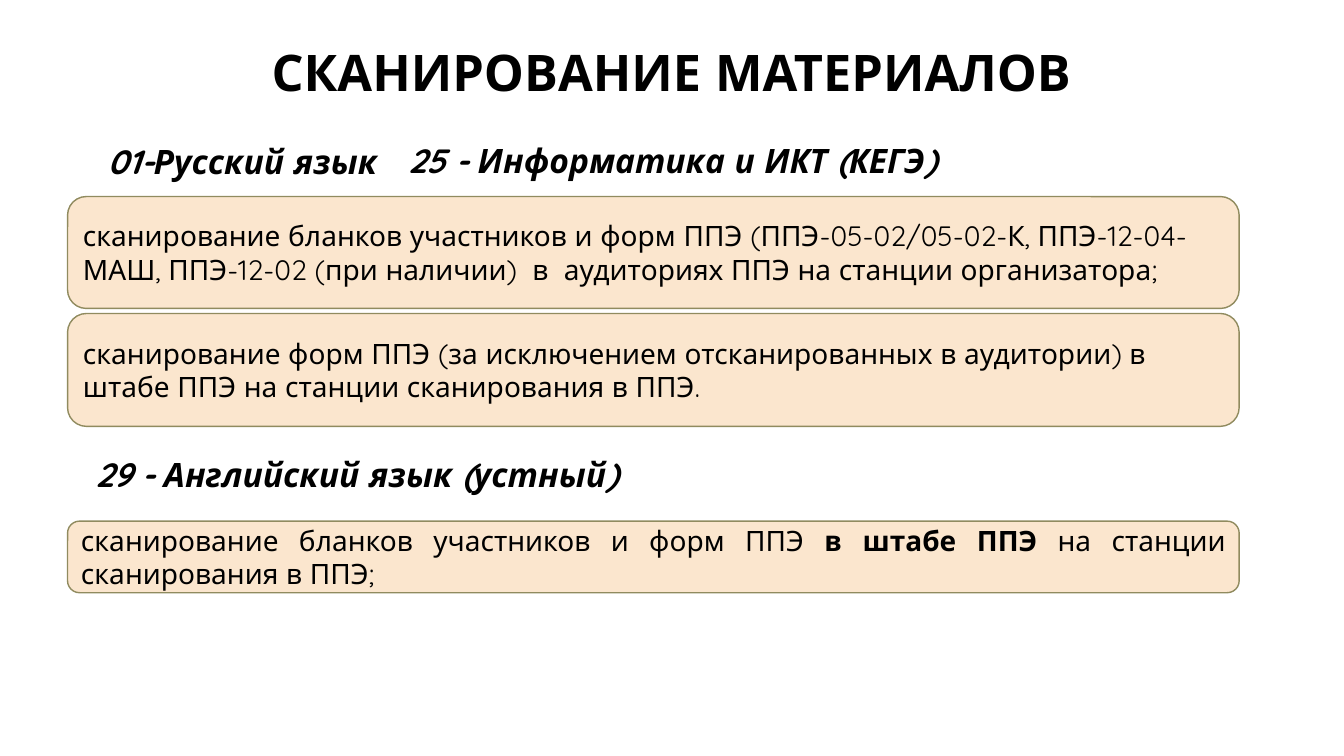
from dataclasses import dataclass

from pptx import Presentation
from pptx import util as u
from pptx.dml.color import RGBColor
from pptx.enum import shapes, text

BLACK = RGBColor(0x00, 0x00, 0x00)
CARD_FILL = RGBColor(0xFB, 0xE6, 0xCE)
CARD_LINE = RGBColor(0x90, 0x8B, 0x5F)
FONT = "Quicksand"
CARD_LEFT, CARD_WIDTH = 0.67, 11.62
HEADING_HEIGHT = 0.5


@dataclass(frozen=True)
class Run:
    text: str
    bold: bool = False


@dataclass(frozen=True)
class Heading:
    text: str
    left: float
    top: float
    width: float


@dataclass(frozen=True)
class Card:
    runs: tuple[Run, ...]
    top: float
    height: float
    align: text.PP_ALIGN = text.PP_ALIGN.LEFT


HEADINGS = (
    Heading("01-Русский язык", 0.33, 1.35, 4.15),
    Heading("25 - Информатика и ИКТ (КЕГЭ)", 3.72, 1.34, 5.9),
    Heading("29 - Английский язык (устный)", 0.59, 4.45, 5.9),
)

CARDS = (
    Card((Run("сканирование бланков участников и форм ППЭ (ППЭ-05-02/05-02-К, "
              "ППЭ-12-04-МАШ, ППЭ-12-02 (при наличии)  в  аудиториях ППЭ "
              "на станции организатора;"),), 1.95, 1.11),
    Card((Run("сканирование форм ППЭ (за исключением отсканированных в аудитории) "
              "в штабе ППЭ на станции сканирования в ППЭ."),), 3.11, 1.12),
    Card((Run("сканирование бланков участников и форм ППЭ "),
          Run("в штабе ППЭ", bold=True),
          Run(" на станции сканирования в ППЭ;")), 5.17, 0.71,
         text.PP_ALIGN.JUSTIFY),
)


def write_text(shape, runs: tuple[Run, ...], *, size: float,
               align: text.PP_ALIGN = text.PP_ALIGN.CENTER,
               anchor: text.MSO_ANCHOR = text.MSO_ANCHOR.MIDDLE,
               italic: bool = False, line_spacing: float | None = None) -> None:
    frame = shape.text_frame
    frame.word_wrap = True
    frame.vertical_anchor = anchor
    paragraph = frame.paragraphs[0]
    paragraph.alignment = align
    paragraph.line_spacing = line_spacing
    for item in runs:
        run = paragraph.add_run()
        run.text = item.text
        run.font.name = FONT
        run.font.size = u.Pt(size)
        run.font.bold = item.bold
        run.font.italic = italic
        run.font.color.rgb = BLACK


def add_title(slide, title: str) -> None:
    box = slide.shapes.add_textbox(u.Inches(2.55), u.Inches(0.39),
                                   u.Inches(8.22), u.Inches(0.71))
    write_text(box, (Run(title, bold=True),), size=36, line_spacing=0.9)


def add_card(slide, card: Card) -> None:
    shape = slide.shapes.add_shape(
        shapes.MSO_SHAPE.ROUNDED_RECTANGLE, u.Inches(CARD_LEFT),
        u.Inches(card.top), u.Inches(CARD_WIDTH), u.Inches(card.height))
    shape.shadow.inherit = False
    shape.fill.solid()
    shape.fill.fore_color.rgb = CARD_FILL
    shape.line.color.rgb = CARD_LINE
    shape.line.width = u.Pt(1)
    write_text(shape, card.runs, size=20, align=card.align)


def add_heading(slide, heading: Heading) -> None:
    box = slide.shapes.add_textbox(
        u.Inches(heading.left), u.Inches(heading.top),
        u.Inches(heading.width), u.Inches(HEADING_HEIGHT))
    write_text(box, (Run(heading.text, bold=True),), size=24, italic=True,
               anchor=text.MSO_ANCHOR.TOP)
    box.text_frame.auto_size = text.MSO_AUTO_SIZE.SHAPE_TO_FIT_TEXT


def main() -> None:
    presentation = Presentation()
    presentation.slide_width = u.Inches(13.33)
    presentation.slide_height = u.Inches(7.5)
    slide = presentation.slides.add_slide(presentation.slide_layouts[6])

    # Title
    add_title(slide, "СКАНИРОВАНИЕ МАТЕРИАЛОВ")

    # Scanning steps
    for card in CARDS:
        add_card(slide, card)

    # Exam subjects
    for heading in HEADINGS:
        add_heading(slide, heading)

    presentation.save("out.pptx")


if __name__ == "__main__":
    main()
